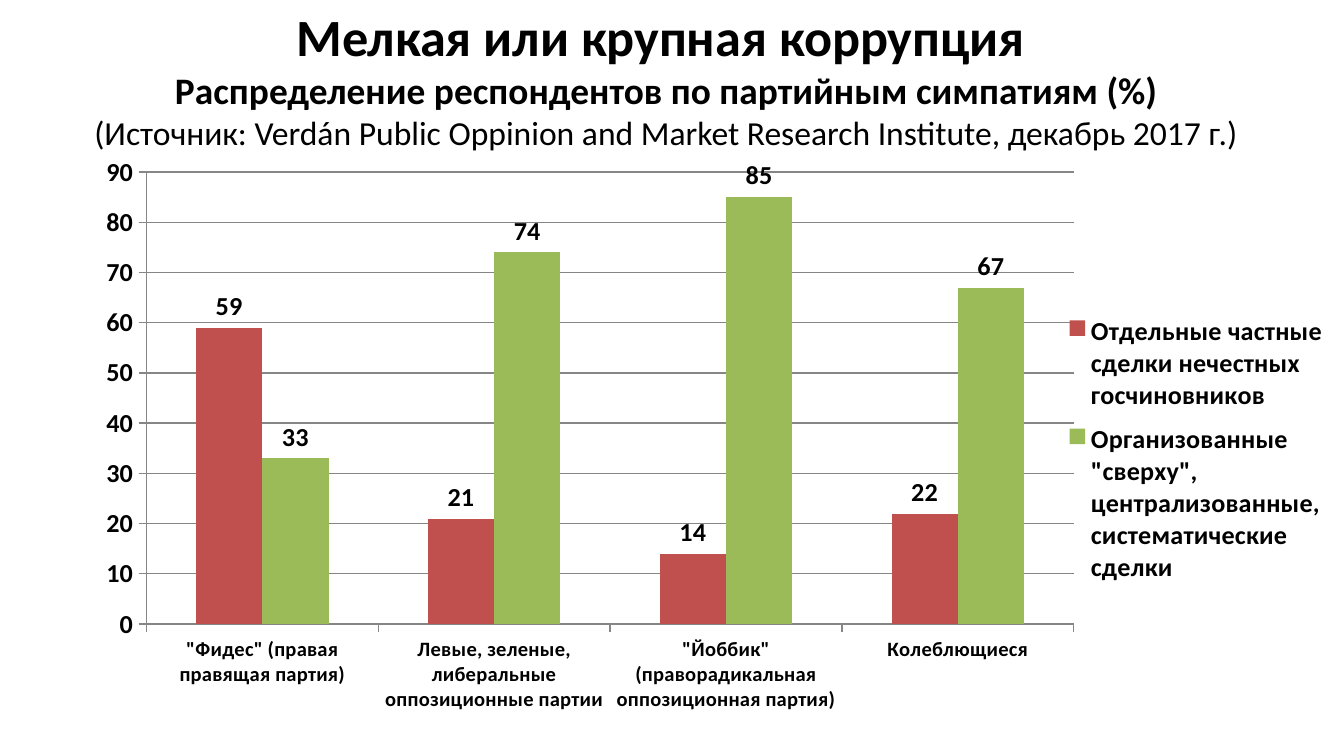
import pptx
import pptx.chart.data
import pptx.dml.color
import pptx.enum.chart
import pptx.enum.text
import pptx.oxml
import pptx.oxml.ns
import pptx.util

Cm = pptx.util.Cm
Pt = pptx.util.Pt
RGBColor = pptx.dml.color.RGBColor

BLACK = RGBColor(0x00, 0x00, 0x00)
GREY = RGBColor(0x86, 0x86, 0x86)
RED = RGBColor(0xC0, 0x50, 0x4D)
GREEN = RGBColor(0x9B, 0xBB, 0x59)
FONT = "Calibri"

# text, size, bold
HEADING = [
    ("Мелкая или крупная коррупция ", 28, True),
    ("Распределение респондентов по партийным симпатиям (%)", 20, True),
    ("(Источник: Verdán Public Oppinion and Market Research Institute, декабрь 2017 г.)", 18, False),
]
PARTIES = [
    '"Фидес" (правая правящая партия)',
    "Левыe, зеленые, либеральные оппозиционные партии",
    '"Йоббик" (праворадикальная оппозиционная партия)',
    "Колеблющиеся",
]
# name, values, colour
ANSWERS = [
    ("Oтдельные частные сделки нечестных госчиновников", (59, 21, 14, 22), RED),
    ('Организованные "сверху", централизованные, систематические сделки', (33, 74, 85, 67), GREEN),
]
# left, top, width, height as shares of the chart
PLOT_AREA = (0.109, 0.02, 0.69, 0.758)
LEGEND_AREA = (0.78, 0.24, 0.22, 0.49)


def style_font(font, size, bold=True):
    font.name = FONT
    font.size = Pt(size)
    font.bold = bold
    font.color.rgb = BLACK


def layout_xml(area, inner=False):
    """Return a manual c:layout element for a part of the chart."""
    target = '<c:layoutTarget val="inner"/>' if inner else ""
    modes = '<c:xMode val="edge"/><c:yMode val="edge"/>'
    sizes = "".join(f'<c:{key} val="{share}"/>' for key, share in zip("xywh", area))
    return pptx.oxml.parse_xml(
        f'<c:layout {pptx.oxml.ns.nsdecls("c")}><c:manualLayout>'
        f"{target}{modes}{sizes}</c:manualLayout></c:layout>"
    )


def add_heading(page):
    box = page.shapes.add_textbox(Cm(1.09), Cm(-0.05), Cm(23.01), Cm(3.07))
    frame = box.text_frame
    frame.word_wrap = True
    frame.text = "\n".join(text for text, _, _ in HEADING)
    for para, (_, size, bold) in zip(frame.paragraphs, HEADING):
        para.alignment = pptx.enum.text.PP_ALIGN.CENTER
        style_font(para.runs[0].font, size, bold)


def style_axes(chart):
    for axis, size in ((chart.category_axis, 11), (chart.value_axis, 14)):
        style_font(axis.tick_labels.font, size)
        axis.format.line.color.rgb = GREY
        axis.major_tick_mark = pptx.enum.chart.XL_TICK_MARK.OUTSIDE
    scale = chart.value_axis
    scale.minimum_scale, scale.maximum_scale, scale.major_unit = 0, 90, 10
    scale.has_major_gridlines = True
    scale.major_gridlines.format.line.color.rgb = GREY


def style_legend(chart):
    chart.has_legend = True
    legend = chart.legend
    legend.position = pptx.enum.chart.XL_LEGEND_POSITION.RIGHT
    legend.include_in_layout = False
    style_font(legend.font, 14)
    element = legend._element
    for old in element.findall(pptx.oxml.ns.qn("c:layout")):
        element.remove(old)
    element.find(pptx.oxml.ns.qn("c:legendPos")).addnext(layout_xml(LEGEND_AREA))


def add_answer_chart(page):
    data = pptx.chart.data.CategoryChartData()
    data.categories = PARTIES
    for name, values, _ in ANSWERS:
        data.add_series(name, values)
    chart = page.shapes.add_chart(
        pptx.enum.chart.XL_CHART_TYPE.COLUMN_CLUSTERED,
        Cm(0), Cm(2.95), Cm(25.4), Cm(11.35), data,
    ).chart
    chart.has_title = False
    style_font(chart.font, 10, False)

    plot = chart.plots[0]
    plot.gap_width = 150
    plot.overlap = 0
    plot.vary_by_categories = False
    for series, (_, _, color) in zip(plot.series, ANSWERS):
        series.format.fill.solid()
        series.format.fill.fore_color.rgb = color
        labels = series.data_labels
        labels.show_value = True
        labels.position = pptx.enum.chart.XL_LABEL_POSITION.OUTSIDE_END
        style_font(labels.font, 14)

    style_axes(chart)
    style_legend(chart)
    plot_area = chart._chartSpace.chart.plotArea
    for old in plot_area.findall(pptx.oxml.ns.qn("c:layout")):
        plot_area.remove(old)
    plot_area.insert(0, layout_xml(PLOT_AREA, inner=True))


def main():
    deck = pptx.Presentation()
    deck.slide_width = Cm(25.4)
    deck.slide_height = Cm(14.29)
    page = deck.slides.add_slide(deck.slide_layouts[6])
    add_answer_chart(page)
    add_heading(page)
    deck.save("out.pptx")


if __name__ == "__main__":
    main()
